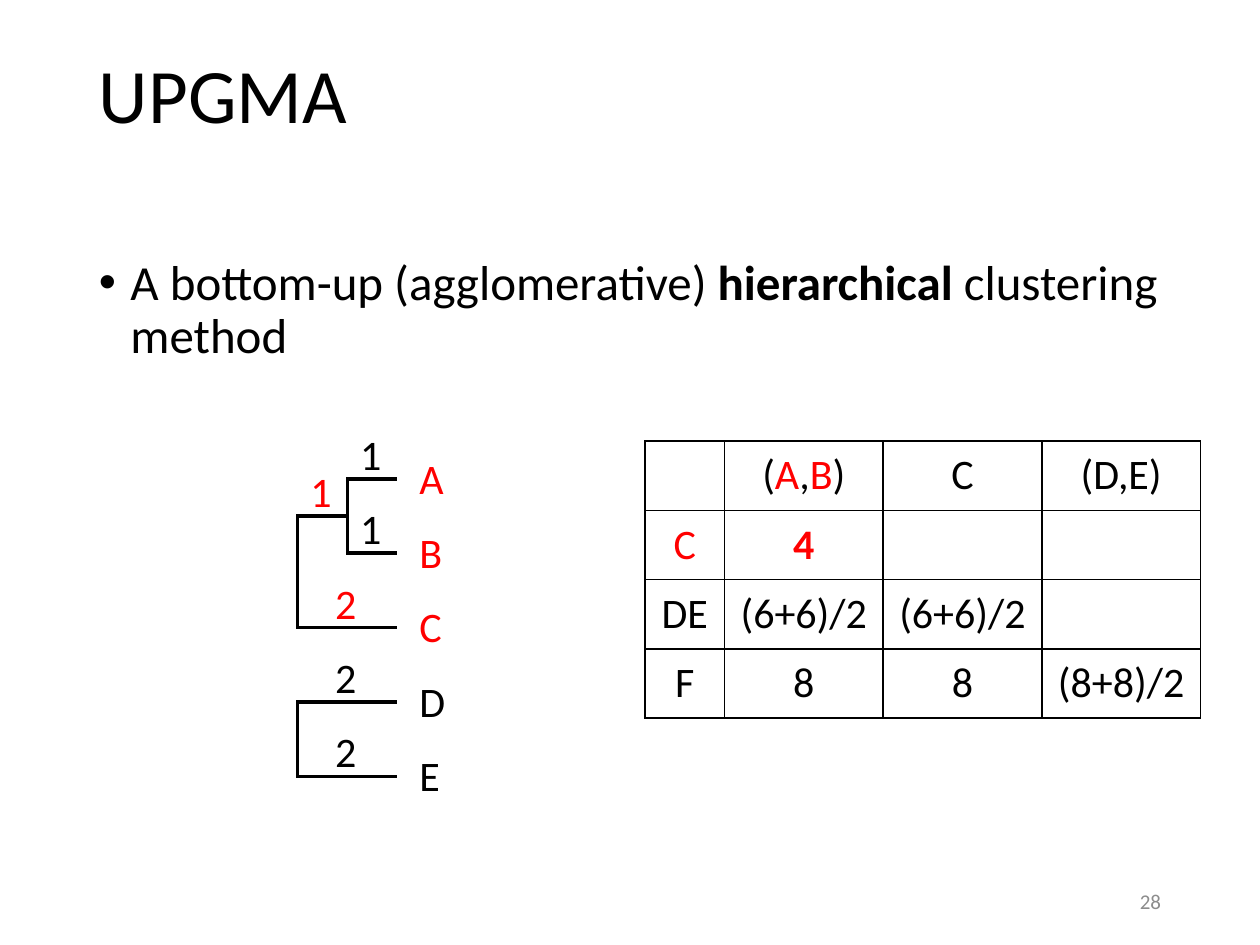
from lxml import etree
from pptx import Presentation
from pptx.dml.color import RGBColor
from pptx.enum.shapes import MSO_CONNECTOR
from pptx.enum.text import MSO_ANCHOR, MSO_AUTO_SIZE, PP_ALIGN
from pptx.oxml.ns import qn
from pptx.util import Pt

HUES = {"ink": "000000", "red": "FF0000", "gray": "8C8C8C"}
FONT = "Calibri"

# Tree grid, in points
ROOT, NODE, TIP = 170, 198.5, 227
TOP, STEP = 273.6, 42.5
ROWS = {name: TOP + i * STEP for i, name in enumerate("ABCDE")}
WIDTHS = {"A": 28.8, "B": 27.4, "C": 27.4, "D": 29.5, "E": 26.6}
DIGIT = 26.6

# Each cell is a list of runs: text, colour, bold
CELLS = [
    [[], [("(", "ink"), ("A", "red"), (",", "ink"), ("B", "red"), (")", "ink")],
     [("C", "ink")], [("(D,E)", "ink")]],
    [[("C", "red")], [("4", "red", True)], [], []],
    [[("DE", "ink")], [("(6+6)/2", "ink")], [("(6+6)/2", "ink")], []],
    [[("F", "ink")], [("8", "ink")], [("8", "ink")], [("(8+8)/2", "ink")]],
]


def hue(name):
    return RGBColor.from_string(HUES[name])


def assign(item, values):
    for key, value in values.items():
        setattr(item, key, value)


def add_runs(para, runs, size):
    for text, color, *bold in runs:
        run = para.add_run()
        run.text = text
        assign(run.font, {"name": FONT, "size": Pt(size), "bold": bool(bold)})
        run.font.color.rgb = hue(color)


def add_text(shapes, box, runs, size, frame=None, para=None):
    shape = shapes.add_textbox(*map(Pt, box))
    assign(shape.text_frame, {"word_wrap": True, **(frame or {})})
    line = shape.text_frame.paragraphs[0]
    assign(line, para or {})
    add_runs(line, runs, size)
    return line


def add_label(shapes, left, top, width, text, color):
    grow = {"word_wrap": False, "auto_size": MSO_AUTO_SIZE.SHAPE_TO_FIT_TEXT}
    add_text(shapes, (left, top, width, 36), [(text, color)], 24, grow)


def add_line(shapes, *ends):
    line = shapes.add_connector(MSO_CONNECTOR.STRAIGHT, *map(Pt, ends))
    line.line.width = Pt(2)
    line.line.color.rgb = hue("ink")
    etree.SubElement(line._element.spPr, qn("a:effectLst"))


def add_branch(shapes, left, right, y, text, color):
    add_line(shapes, left, y, right, y)
    add_label(shapes, (left + right) / 2 - 14, y - 32.4, DIGIT, text, color)


def add_stem(shapes, x, top, end):
    # Overlap by half a line width to close the corners
    add_line(shapes, x, top - 1, x, end + 1)


def add_leaf(shapes, name, left, text, color, tint):
    add_branch(shapes, left, TIP, ROWS[name], text, color)
    add_label(shapes, 232.6, ROWS[name] - 18.7, WIDTHS[name], name, tint)


def add_border(cell):
    props = cell._tc.get_or_add_tcPr()
    for i, side in enumerate(("lnL", "lnR", "lnT", "lnB")):
        edge = etree.Element(qn(f"a:{side}"), w=str(Pt(1)))
        fill = etree.SubElement(edge, qn("a:solidFill"))
        etree.SubElement(fill, qn("a:srgbClr"), val=HUES["ink"])
        props.insert(i, edge)


def add_grid(shapes):
    widths = [45.4] + [90.7] * 3
    frame = shapes.add_table(4, 4, Pt(368.6), Pt(252), Pt(sum(widths)), Pt(158.4))
    table = frame.table
    assign(table, {"first_row": False, "horz_banding": False})
    for col, width in zip(table.columns, widths):
        col.width = Pt(width)
    for r, row in enumerate(CELLS):
        for c, runs in enumerate(row):
            cell = table.cell(r, c)
            cell.fill.background()
            cell.vertical_anchor = MSO_ANCHOR.MIDDLE
            para = cell.text_frame.paragraphs[0]
            para.alignment = PP_ALIGN.CENTER
            add_runs(para, runs, 24)
            add_border(cell)


def add_bullet(para):
    props = para._p.get_or_add_pPr()
    assign_xml = {"marL": Pt(18), "indent": -Pt(18)}
    for key, value in assign_xml.items():
        props.set(key, str(value))
    etree.SubElement(props, qn("a:buFont"), typeface="Arial")
    etree.SubElement(props, qn("a:buChar"), char="•")


def main():
    deck = Presentation()
    assign(deck, {"slide_width": Pt(720), "slide_height": Pt(540)})
    shapes = deck.slides.add_slide(deck.slide_layouts[6]).shapes

    # Body, title and page number
    body = add_text(
        shapes, (49.5, 144, 621, 342.6),
        [("A bottom-up (agglomerative) ", "ink"), ("hierarchical ", "ink", True),
         ("clustering method", "ink")],
        28, para={"line_spacing": 0.9, "space_before": Pt(10)})
    add_bullet(body)
    add_text(shapes, (49.5, 28.8, 621, 104.4), [("UPGMA", "ink")], 44,
             para={"line_spacing": 0.9})
    add_text(shapes, (508.5, 500.5, 162, 28.8), [("28", "gray")], 12,
             {"vertical_anchor": MSO_ANCHOR.MIDDLE}, {"alignment": PP_ALIGN.RIGHT})

    # Lower cluster: D and E
    lower = shapes.add_group_shape().shapes
    for name in "DE":
        add_leaf(lower, name, ROOT, "2", "ink", "ink")
    add_stem(lower, ROOT, ROWS["D"], ROWS["E"])

    # Distance table
    add_grid(shapes)

    # Upper cluster: A and B, joined with C
    upper = shapes.add_group_shape().shapes
    fork = (ROWS["A"] + ROWS["B"]) / 2
    add_leaf(upper, "C", ROOT, "2", "red", "red")
    add_branch(upper, ROOT, NODE, fork, "1", "red")
    add_stem(upper, ROOT, fork, ROWS["C"])
    for name in "AB":
        add_leaf(upper, name, NODE, "1", "ink", "red")
    add_stem(upper, NODE, ROWS["A"], ROWS["B"])

    deck.save("out.pptx")


if __name__ == "__main__":
    main()
